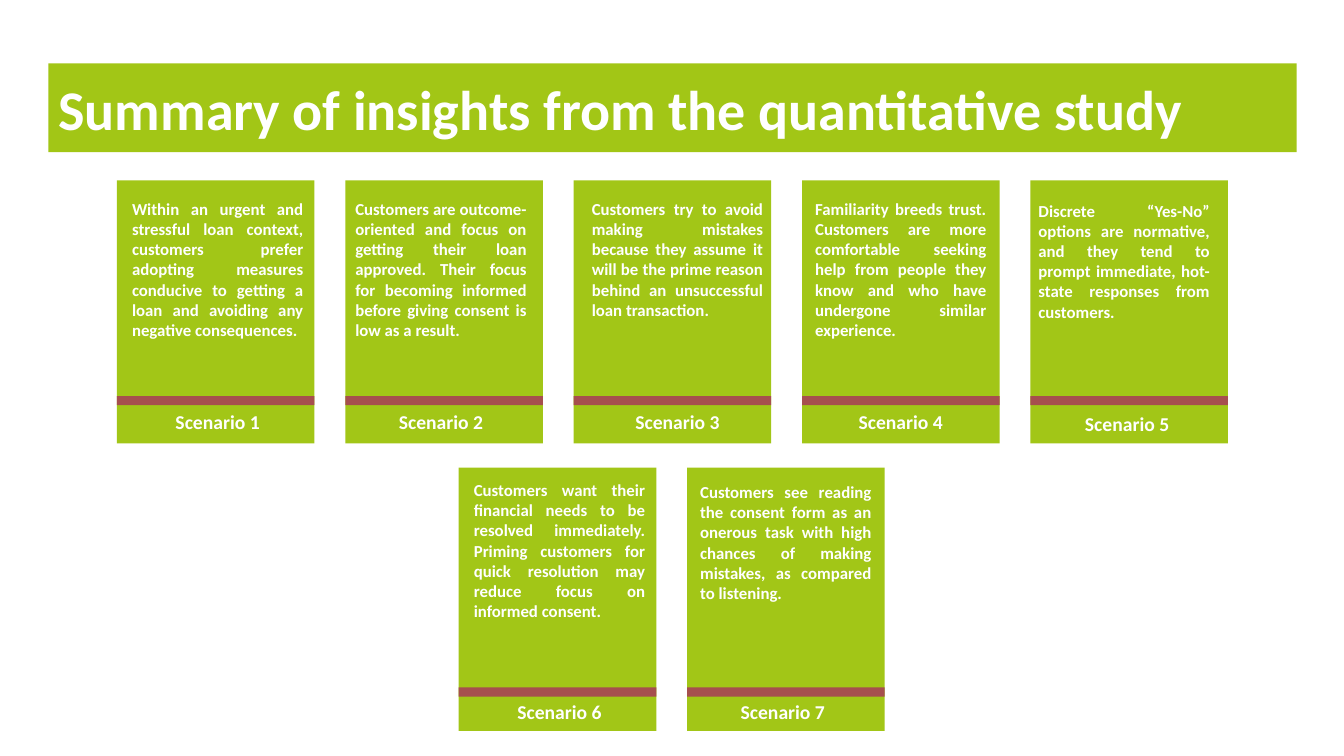
from dataclasses import dataclass

from pptx import Presentation
from pptx.dml.color import RGBColor
from pptx.enum.shapes import MSO_SHAPE as Shape
from pptx.enum.text import MSO_ANCHOR as Anchor, MSO_AUTO_SIZE as AutoSize, PP_ALIGN as Align
from pptx.util import Inches, Pt

TITLE = "Summary of insights from the quantitative study"


@dataclass
class Card:
    insight: str
    insight_shift: tuple
    label_shift: tuple


@dataclass
class Row:
    left: float
    top: float
    bar_drop: float
    cards: list


ROWS = [
    Row(1.16, 1.79, 2.14, [
        Card("Within an urgent and stressful loan context, customers prefer adopting measures "
             "conducive to getting a loan and avoiding any negative consequences.",
             (0.02, 0.05), (0.02, 2.15)),
        Card("Customers are outcome-oriented and focus on getting their loan approved. Their focus "
             "for becoming informed before giving consent is low as a result.",
             (-0.03, 0.05), (-0.03, 2.15)),
        Card("Customers try to avoid making mistakes because they assume it will be the prime "
             "reason behind an unsuccessful loan transaction.",
             (0.05, 0.05), (0.05, 2.15)),
        Card("Familiarity breeds trust. Customers are more comfortable seeking help from people "
             "they know and who have undergone similar experience.",
             (0, 0.05), (0, 2.15)),
        Card("Discrete “Yes-No” options are normative, and they tend to prompt immediate, "
             "hot-state responses from customers.",
             (-0.05, 0.07), (-0.02, 2.17)),
    ]),
    Row(4.55, 4.64, 2.18, [
        Card("Customers want their financial needs to be resolved immediately. Priming customers "
             "for quick resolution may reduce focus on informed consent.",
             (0.02, -0.01), (0.02, 2.17)),
        Card("Customers see reading the consent form as an onerous task with high chances of "
             "making mistakes, as compared to listening.",
             (0, 0.01), (-0.03, 2.17)),
    ]),
]

CARD_WIDTH, CARD_HEIGHT, CARD_PITCH = 1.96, 2.61, 2.265
BAR_HEIGHT = 0.09
INSIGHT_HEIGHT, LABEL_HEIGHT = 1.68, 0.52


class Theme:
    green = RGBColor.from_string("A2C617")
    title_green = RGBColor.from_string("A2C616")
    red = RGBColor.from_string("A64F4E")
    white = RGBColor.from_string("FFFFFF")
    font = "Calibri"
    title_size, label_size, insight_size = 40, 14, 12


def write(shape, text, size, align, inset):
    frame = shape.text_frame
    frame.word_wrap = True
    frame.auto_size = AutoSize.NONE
    frame.margin_left = frame.margin_right = Inches(inset)
    frame.margin_top = frame.margin_bottom = Inches(inset)
    para = frame.paragraphs[0]
    para.text = text
    para.alignment = align
    para.font.name = Theme.font
    para.font.size = Pt(size)
    para.font.bold = True
    para.font.color.rgb = Theme.white


def add_block(page, left, top, height, color):
    block = page.shapes.add_shape(
        Shape.RECTANGLE, Inches(left), Inches(top), Inches(CARD_WIDTH), Inches(height))
    block.shadow.inherit = False
    block.fill.solid()
    block.fill.fore_color.rgb = color
    block.line.fill.background()


def add_text(page, left, top, height, text, size, align):
    box = page.shapes.add_textbox(
        Inches(left), Inches(top), Inches(CARD_WIDTH), Inches(height))
    write(box, text, size, align, 0.13)


def add_title(page):
    title = page.shapes.title
    title.left, title.top = Inches(0.48), Inches(0.63)
    title.width, title.height = Inches(12.38), Inches(0.88)
    title.fill.solid()
    title.fill.fore_color.rgb = Theme.title_green
    write(title, TITLE, Theme.title_size, Align.LEFT, 0.1)
    title.text_frame.vertical_anchor = Anchor.MIDDLE


def add_card(page, card, number, left, top, bar_drop):
    add_block(page, left, top, CARD_HEIGHT, Theme.green)
    add_block(page, left, top + bar_drop, BAR_HEIGHT, Theme.red)
    across, down = card.insight_shift
    add_text(page, left + across, top + down, INSIGHT_HEIGHT,
             card.insight, Theme.insight_size, Align.JUSTIFY)
    across, down = card.label_shift
    add_text(page, left + across, top + down, LABEL_HEIGHT,
             f"Scenario {number}", Theme.label_size, Align.CENTER)


def main():
    deck = Presentation()
    deck.slide_width, deck.slide_height = Inches(13.33), Inches(7.5)
    page = deck.slides.add_slide(deck.slide_layouts[5])
    add_title(page)
    number = 1
    for row in ROWS:
        for column, card in enumerate(row.cards):
            left = row.left + column * CARD_PITCH
            add_card(page, card, number, left, row.top, row.bar_drop)
            number += 1
    deck.save("out.pptx")


if __name__ == "__main__":
    main()
